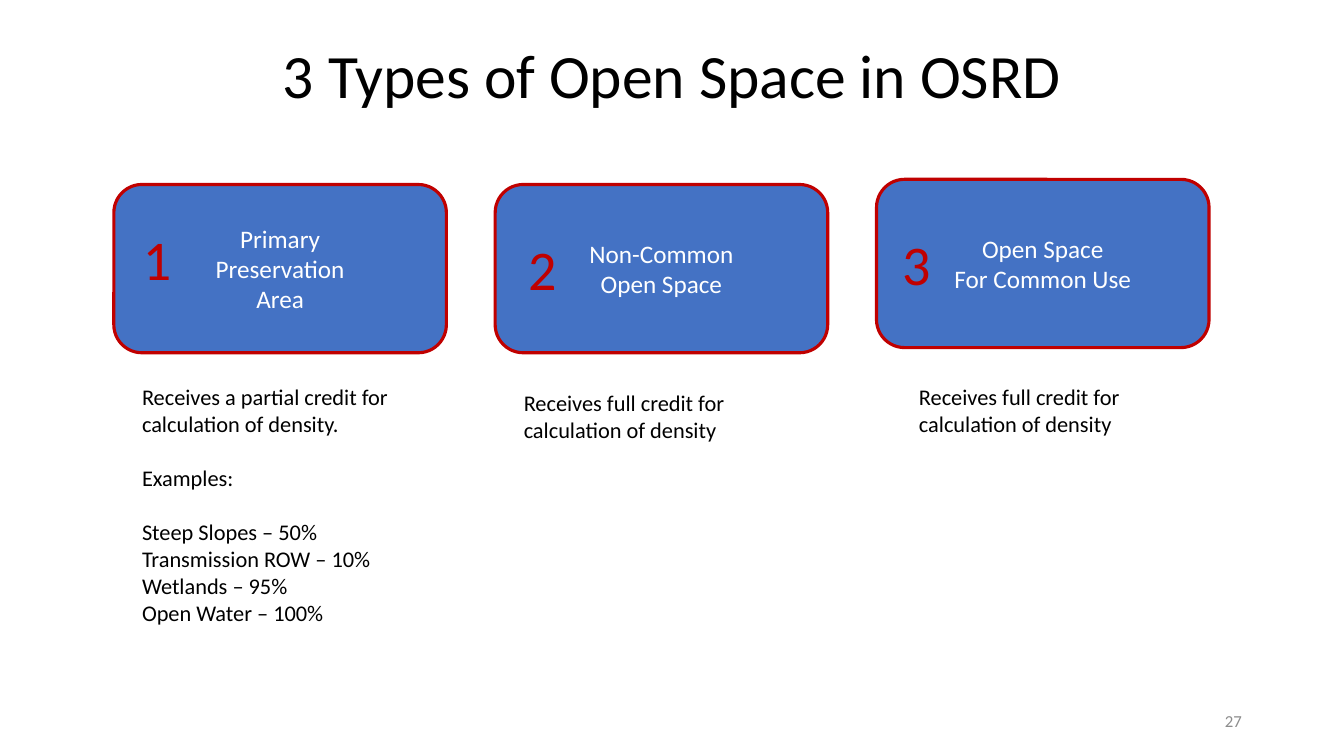
from pptx import Presentation
from pptx.dml.color import RGBColor
from pptx.enum.shapes import MSO_SHAPE
from pptx.enum.text import MSO_ANCHOR, PP_ALIGN
from pptx.oxml import parse_xml
from pptx.oxml.ns import nsdecls
from pptx.util import Cm, Pt

COLORS = {"card": "4472C4", "accent": "C00000", "light": "FFFFFF",
          "text": "000000", "muted": "8C8C8C"}

TITLE = "3 Types of Open Space in OSRD"
PAGE_NUMBER = "27"
FULL_CREDIT = ["Receives full credit for calculation of density"]
PARTIAL_CREDIT = [
    "Receives a partial credit for calculation of density.",
    "Examples:",
    "Steep Slopes – 50%",
    "Transmission ROW – 10%",
    "Wetlands – 95%",
    "Open Water – 100%",
]
SECTION_STARTS = ("Examples:", "Steep Slopes – 50%")

OPEN_SPACE_TYPES = [
    {"name": ["Primary", "Preservation", "Area"], "card_top": 4.65,
     "numeral_at": (3.12, 5.54), "credit": PARTIAL_CREDIT,
     "credit_box": (3.33, 9.53, 7.54, 6.4)},
    {"name": ["Non-Common", "Open Space"], "card_top": 4.65,
     "numeral_at": (12.83, 5.79), "credit": FULL_CREDIT,
     "credit_box": (12.95, 9.68, 7.54, 1.63)},
    {"name": ["Open Space", "For Common Use"], "card_top": 4.52,
     "numeral_at": (22.25, 5.66), "credit": FULL_CREDIT,
     "credit_box": (22.91, 9.53, 6.86, 1.63)},
]
CARD_LEFT, CARD_STEP, CARD_SIZE = 2.87, 9.61, (8.38, 4.24)
NUMERAL_SIZE = (1.68, 1.96)

FORMATS = {
    "title": {"size": 44, "color": "text",
              "paragraph": {"alignment": PP_ALIGN.CENTER, "line_spacing": 0.9}},
    "name": {"size": 18, "color": "light",
             "paragraph": {"alignment": PP_ALIGN.CENTER}},
    "numeral": {"size": 40, "color": "accent",
                "paragraph": {"alignment": PP_ALIGN.CENTER}},
    "credit": {"size": 16, "color": "text",
               "paragraph": {"alignment": PP_ALIGN.LEFT}},
    "page": {"size": 12, "color": "muted",
             "paragraph": {"alignment": PP_ALIGN.RIGHT}},
}


def rgb(role):
    return RGBColor.from_string(COLORS[role])


def write(frame, lines, style, anchor=MSO_ANCHOR.TOP):
    look = FORMATS[style]
    frame.word_wrap = True
    frame.vertical_anchor = anchor
    for index, line in enumerate(lines):
        paragraph = frame.paragraphs[0] if index == 0 else frame.add_paragraph()
        for attribute, value in look["paragraph"].items():
            setattr(paragraph, attribute, value)
        if line in SECTION_STARTS:
            paragraph.space_before = Pt(19.5)
        run = paragraph.add_run()
        run.text = line
        for attribute, value in {"name": "Calibri", "size": Pt(look["size"])}.items():
            setattr(run.font, attribute, value)
        run.font.color.rgb = rgb(look["color"])


def add_text(slide, box, lines, style, anchor=MSO_ANCHOR.TOP):
    frame = slide.shapes.add_textbox(*map(Cm, box)).text_frame
    write(frame, lines, style, anchor)
    return frame


def add_card(slide, left, top, name):
    card = slide.shapes.add_shape(MSO_SHAPE.ROUNDED_RECTANGLE,
                                  *map(Cm, (left, top, *CARD_SIZE)))
    card.shadow.inherit = False
    card.fill.solid()
    card.fill.fore_color.rgb = rgb("card")
    card.line.color.rgb = rgb("accent")
    card.line.width = Pt(2.25)
    write(card.text_frame, name, "name", MSO_ANCHOR.MIDDLE)


def add_numeral(slide, position, number):
    frame = add_text(slide, (*position, *NUMERAL_SIZE), [str(number)], "numeral")
    properties = frame.paragraphs[0].runs[0].font._element
    properties.insert(0, parse_xml(
        f'<a:ln {nsdecls("a")} w="{Pt(0.75)}"><a:solidFill>'
        f'<a:srgbClr val="{COLORS["light"]}"/></a:solidFill></a:ln>'))


def main():
    presentation = Presentation()
    presentation.slide_width, presentation.slide_height = Cm(33.87), Cm(19.05)
    slide = presentation.slides.add_slide(presentation.slide_layouts[6])

    add_text(slide, (23.93, 17.65, 7.62, 1.02), [PAGE_NUMBER], "page", MSO_ANCHOR.MIDDLE)
    add_text(slide, (2.34, 1.02, 29.21, 2.39), [TITLE], "title")
    for index, kind in enumerate(OPEN_SPACE_TYPES):
        add_card(slide, CARD_LEFT + index * CARD_STEP, kind["card_top"], kind["name"])
        add_numeral(slide, kind["numeral_at"], index + 1)
        add_text(slide, kind["credit_box"], kind["credit"], "credit")

    presentation.save("out.pptx")


if __name__ == "__main__":
    main()
